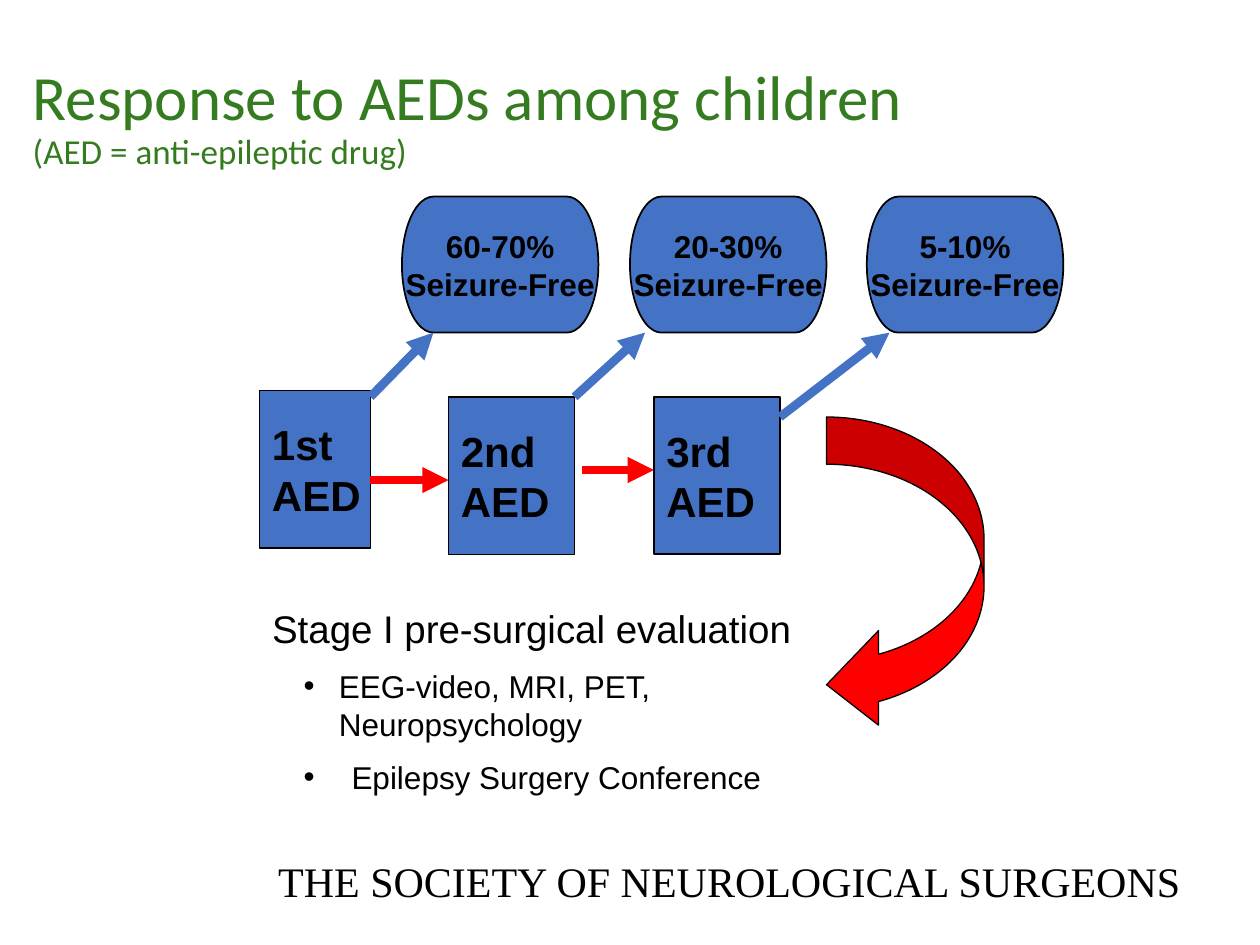
from lxml import etree
from pptx import Presentation
from pptx.dml.color import RGBColor
from pptx.enum.shapes import MSO_CONNECTOR, MSO_SHAPE
from pptx.enum.text import MSO_ANCHOR, MSO_AUTO_SIZE, PP_ALIGN
from pptx.oxml.ns import qn
from pptx.util import Inches, Pt

COLORS = {"blue": "4472C4", "red": "FF0000", "black": "000000", "green": "357C21"}

TITLE = [("Response to AEDs among children", 36), ("(AED = anti-epileptic drug)", 20)]
FOOTER = "THE SOCIETY OF NEUROLOGICAL SURGEONS"
EVALUATION = "Stage I pre-surgical evaluation"
# bullet text, left margin of the text
BULLETS = [("EEG-video, MRI, PET, Neuropsychology", 0.53),
           ("Epilepsy Surgery Conference", 0.63)]
BULLET_LEFT = 0.25

# drug, shape, box (left, top, width, height), response, left edge of response
STAGES = [
    ("1st", MSO_SHAPE.FLOWCHART_PROCESS, (2.06, 3.1, 0.88, 1.25), "60-70%", 3.19),
    ("2nd", MSO_SHAPE.FLOWCHART_PROCESS, (3.56, 3.15, 1, 1.25), "20-30%", 5),
    ("3rd", MSO_SHAPE.RECTANGLE, (5.19, 3.15, 1, 1.25), "5-10%", 6.88),
]
RESPONSE_TOP, RESPONSE_WIDTH, RESPONSE_HEIGHT = 1.56, 1.56, 1.08
RESPONSE_BOTTOM = RESPONSE_TOP + RESPONSE_HEIGHT

# start, end, colour
ARROWS = [
    ((2.94, 3.15), (3.44, RESPONSE_BOTTOM), "blue"),
    ((4.56, 3.15), (5.12, RESPONSE_BOTTOM), "blue"),
    ((6.19, 3.31), (7.06, RESPONSE_BOTTOM), "blue"),
    ((2.94, 3.81), (3.56, 3.81), "red"),
    ((4.62, 3.73), (5.19, 3.73), "red"),
]


def color(name):
    return RGBColor.from_string(COLORS[name])


def place(shape, left, top, width, height):
    shape.left, shape.top = Inches(left), Inches(top)
    shape.width, shape.height = Inches(width), Inches(height)


def write(paragraph, text, size, font="Arial", fill="black", bold=False,
          align=PP_ALIGN.LEFT, before=0):
    paragraph.alignment = align
    paragraph.space_before = Pt(before)
    span = paragraph.add_run()
    span.text = text
    span.font.name, span.font.size, span.font.bold = font, Pt(size), bold
    span.font.color.rgb = color(fill)


def set_bullet(paragraph, margin=0, bullet_left=0, char=None):
    """Indent a paragraph, with a bullet if char is given and none otherwise."""
    properties = paragraph._p.get_or_add_pPr()
    properties.set("marL", str(Inches(margin)))
    properties.set("indent", str(Inches(bullet_left - margin)))
    if char:
        font = etree.SubElement(properties, qn("a:buFont"))
        font.set("typeface", "Arial")
        etree.SubElement(properties, qn("a:buChar")).set("char", char)
    else:
        etree.SubElement(properties, qn("a:buNone"))


def add_block(page, kind, box, fill, line_width=1):
    block = page.shapes.add_shape(kind, *map(Inches, box))
    block.shadow.inherit = False
    block.fill.solid()
    block.fill.fore_color.rgb = color(fill)
    block.line.color.rgb = color("black")
    block.line.width = Pt(line_width)
    return block


def add_labelled_block(page, kind, box, lines, size, align):
    frame = add_block(page, kind, box, "blue").text_frame
    frame.word_wrap = False
    frame.vertical_anchor = MSO_ANCHOR.MIDDLE
    for index, line in enumerate(lines):
        paragraph = frame.add_paragraph() if index else frame.paragraphs[0]
        write(paragraph, line, size, bold=True, align=align)


def add_arrow(page, start, end, fill):
    arrow = page.shapes.add_connector(MSO_CONNECTOR.STRAIGHT, *map(Inches, start + end))
    arrow.line.color.rgb = color(fill)
    arrow.line.width = Pt(5)
    etree.SubElement(arrow.line._get_or_add_ln(), qn("a:tailEnd")).set("type", "triangle")
    etree.SubElement(arrow._element.spPr, qn("a:effectLst"))


def add_title(page):
    title = page.shapes.title
    place(title, 0.16, 0.22, 8.62, 1.45)
    frame = title.text_frame
    frame.vertical_anchor = MSO_ANCHOR.MIDDLE
    frame.auto_size = MSO_AUTO_SIZE.NONE
    paragraph = frame.paragraphs[0]
    paragraph.line_spacing = 0.9
    for index, (text, size) in enumerate(TITLE):
        if index:
            paragraph.add_line_break()
        write(paragraph, text, size, font="Calibri", fill="green")


def add_evaluation(page):
    body = page.placeholders[1]
    place(body, 2.06, 4.75, 4.38, 1.68)
    frame = body.text_frame
    frame.auto_size = MSO_AUTO_SIZE.NONE
    heading = frame.paragraphs[0]
    set_bullet(heading)
    write(heading, EVALUATION, 22)
    for text, margin in BULLETS:
        paragraph = frame.add_paragraph()
        paragraph.level = 1
        set_bullet(paragraph, margin, BULLET_LEFT, "•")
        write(paragraph, text, 18, before=9)


def add_footer(page):
    box = page.shapes.add_textbox(*map(Inches, (2.11, 6.74, 7.43, 0.5)))
    box.text_frame.word_wrap = False
    write(box.text_frame.paragraphs[0], FOOTER, 24, font="Times New Roman")


def main():
    deck = Presentation()
    deck.slide_width, deck.slide_height = Inches(10), Inches(7.5)
    page = deck.slides.add_slide(deck.slide_layouts[1])
    add_footer(page)
    add_title(page)
    for drug, kind, box, share, left in STAGES:
        add_labelled_block(page, kind, box, (drug, "AED"), 24, PP_ALIGN.LEFT)
        response = (left, RESPONSE_TOP, RESPONSE_WIDTH, RESPONSE_HEIGHT)
        add_labelled_block(page, MSO_SHAPE.FLOWCHART_TERMINATOR, response,
                           (share, "Seizure-Free"), 18, PP_ALIGN.CENTER)
    for start, end, fill in ARROWS:
        add_arrow(page, start, end, fill)
    curve = add_block(page, MSO_SHAPE.CURVED_LEFT_ARROW, (6.56, 3.31, 1.25, 2.5), "red", 0.75)
    for index, value in enumerate((0.3, 0.6, 0.33)):
        curve.adjustments[index] = value
    add_evaluation(page)
    deck.save("out.pptx")


if __name__ == "__main__":
    main()
